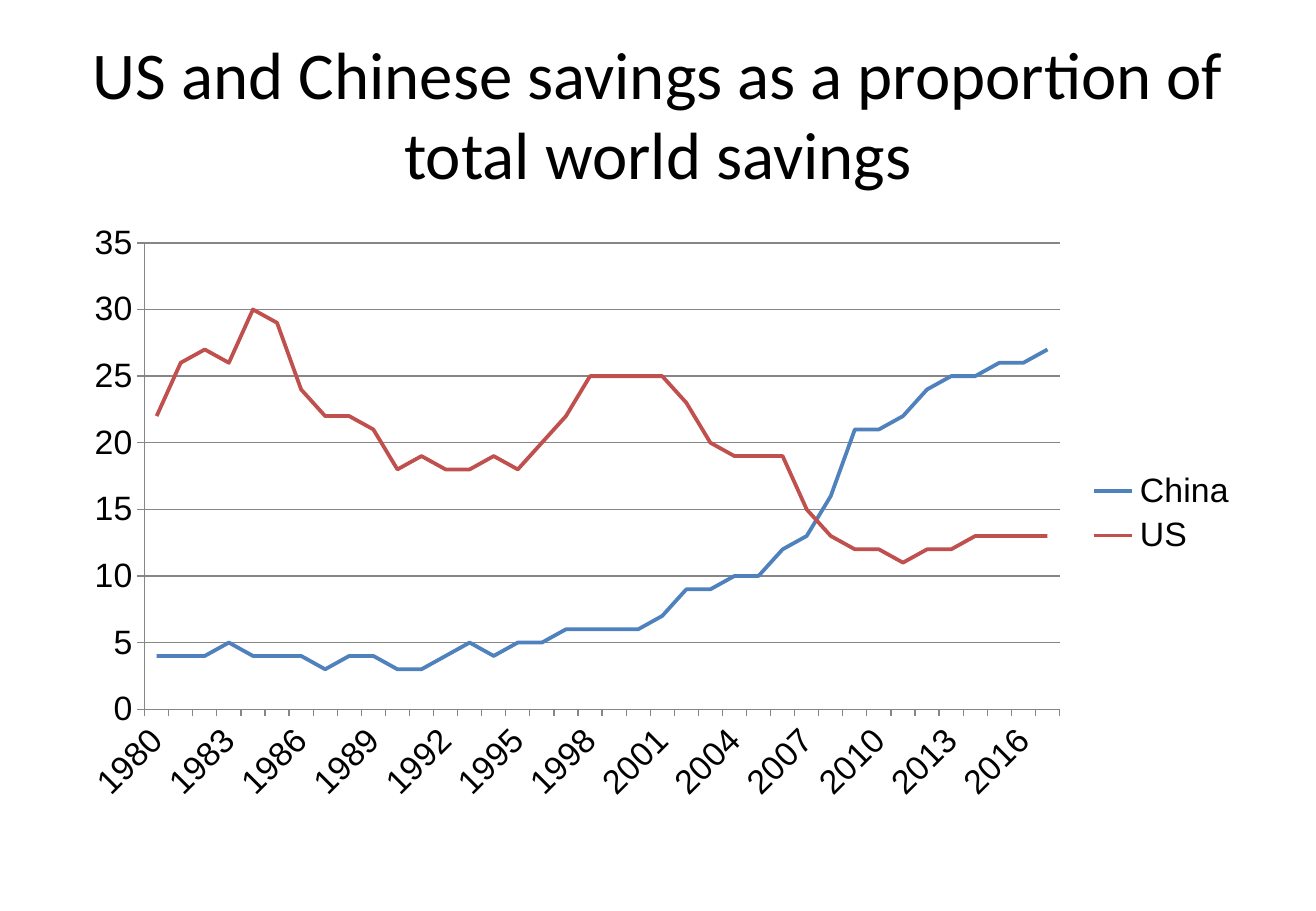
from dataclasses import dataclass

from pptx import Presentation
from pptx import oxml
from pptx import util as u
from pptx.chart import data as cd
from pptx.dml import color as col
from pptx.enum import chart as ch, text
from pptx.oxml import ns


@dataclass(frozen=True)
class Theme:
    ink: str = "000000"
    grid: str = "868686"
    china: str = "4F81BD"
    us: str = "C0504D"
    head: str = "Calibri"
    body: str = "Arial"
    big: float = 39.6
    small: float = 20
    thin: float = 0.75
    thick: float = 2.25


THEME = Theme()
TITLE = "US and Chinese savings as a proportion of total world savings"
YEARS = [str(year) for year in range(1980, 2018)]
CHINA = [4, 4, 4, 5, 4, 4, 4, 3, 4, 4,
         3, 3, 4, 5, 4, 5, 5, 6, 6, 6,
         6, 7, 9, 9, 10, 10, 12, 13, 16, 21,
         21, 22, 24, 25, 25, 26, 26, 27]
US = [22, 26, 27, 26, 30, 29, 24, 22, 22, 21,
      18, 19, 18, 18, 19, 18, 20, 22, 25, 25,
      25, 25, 23, 20, 19, 19, 19, 15, 13, 12,
      12, 11, 12, 12, 13, 13, 13, 13]
SAVINGS = [("China", CHINA, THEME.china), ("US", US, THEME.us)]
PLOT = (0.65, 0.25, 7.53, 3.84)


def set_font(font, name, size):
    font.name = name
    font.size = u.Pt(size)
    font.color.rgb = col.RGBColor.from_string(THEME.ink)


def set_line(line, tone, width):
    line.color.rgb = col.RGBColor.from_string(tone)
    line.width = u.Pt(width)


def add_title(slide, box):
    frame = slide.shapes.add_textbox(*map(u.Inches, box)).text_frame
    frame.word_wrap = True
    frame.vertical_anchor = text.MSO_ANCHOR.MIDDLE
    frame.text = TITLE
    para = frame.paragraphs[0]
    para.alignment = text.PP_ALIGN.CENTER
    set_font(para.runs[0].font, THEME.head, THEME.big)


def place_plot(chart, box):
    area = chart.element.find(".//" + ns.qn("c:plotArea"))
    for old in area.findall(ns.qn("c:layout")):
        area.remove(old)
    modes = "".join(f'<c:{key}Mode val="edge"/>' for key in "xy")
    sizes = "".join(f'<c:{key} val="{part / whole}"/>'
                    for key, part, whole in zip("xywh", PLOT, box[2:] * 2))
    area.insert(0, oxml.parse_xml(
        f'<c:layout {ns.nsdecls("c")}><c:manualLayout>'
        f'<c:layoutTarget val="inner"/>{modes}{sizes}'
        '</c:manualLayout></c:layout>'))


def slant_years(chart):
    axis = chart.element.find(".//" + ns.qn("c:catAx"))
    body = axis.find(ns.qn("c:txPr")).find(ns.qn("a:bodyPr"))
    body.set("rot", "-2700000")
    body.set("vert", "horz")
    skip = oxml.parse_xml(f'<c:tickLblSkip {ns.nsdecls("c")} val="3"/>')
    axis.find(ns.qn("c:noMultiLvlLbl")).addprevious(skip)


def add_savings(slide, box):
    data = cd.CategoryChartData(number_format="0")
    data.categories = YEARS
    for name, vals, _ in SAVINGS:
        data.add_series(name, vals)
    chart = slide.shapes.add_chart(
        ch.XL_CHART_TYPE.LINE, *map(u.Inches, box), data).chart
    set_font(chart.font, THEME.body, THEME.small)
    chart.has_title = False
    chart.has_legend = True
    chart.legend.position = ch.XL_LEGEND_POSITION.RIGHT
    chart.legend.include_in_layout = False
    set_font(chart.legend.font, THEME.body, THEME.small)

    plot = chart.plots[0]
    plot.vary_by_categories = False
    for series, (_, _, tone) in zip(plot.series, SAVINGS):
        series.smooth = False
        series.marker.style = ch.XL_MARKER_STYLE.NONE
        set_line(series.format.line, tone, THEME.thick)

    for axis in (chart.category_axis, chart.value_axis):
        axis.major_tick_mark = ch.XL_TICK_MARK.OUTSIDE
        axis.minor_tick_mark = ch.XL_TICK_MARK.NONE
        set_line(axis.format.line, THEME.grid, THEME.thin)
        set_font(axis.tick_labels.font, THEME.body, THEME.small)
    scale = chart.value_axis
    scale.minimum_scale, scale.maximum_scale, scale.major_unit = 0, 35, 5
    scale.tick_labels.number_format = "#,##0"
    scale.tick_labels.number_format_is_linked = False
    scale.has_major_gridlines = True
    set_line(scale.major_gridlines.format.line, THEME.grid, THEME.thin)
    place_plot(chart, box)
    slant_years(chart)


def main():
    deck = Presentation()
    deck.slide_width, deck.slide_height = u.Inches(10.83), u.Inches(7.5)
    slide = deck.slides.add_slide(deck.slide_layouts[6])
    left, width = 0.54, 9.75
    add_title(slide, (left, 0.3, width, 1.25))
    add_savings(slide, (left, 1.75, width, 4.95))
    deck.save("out.pptx")


if __name__ == "__main__":
    main()
